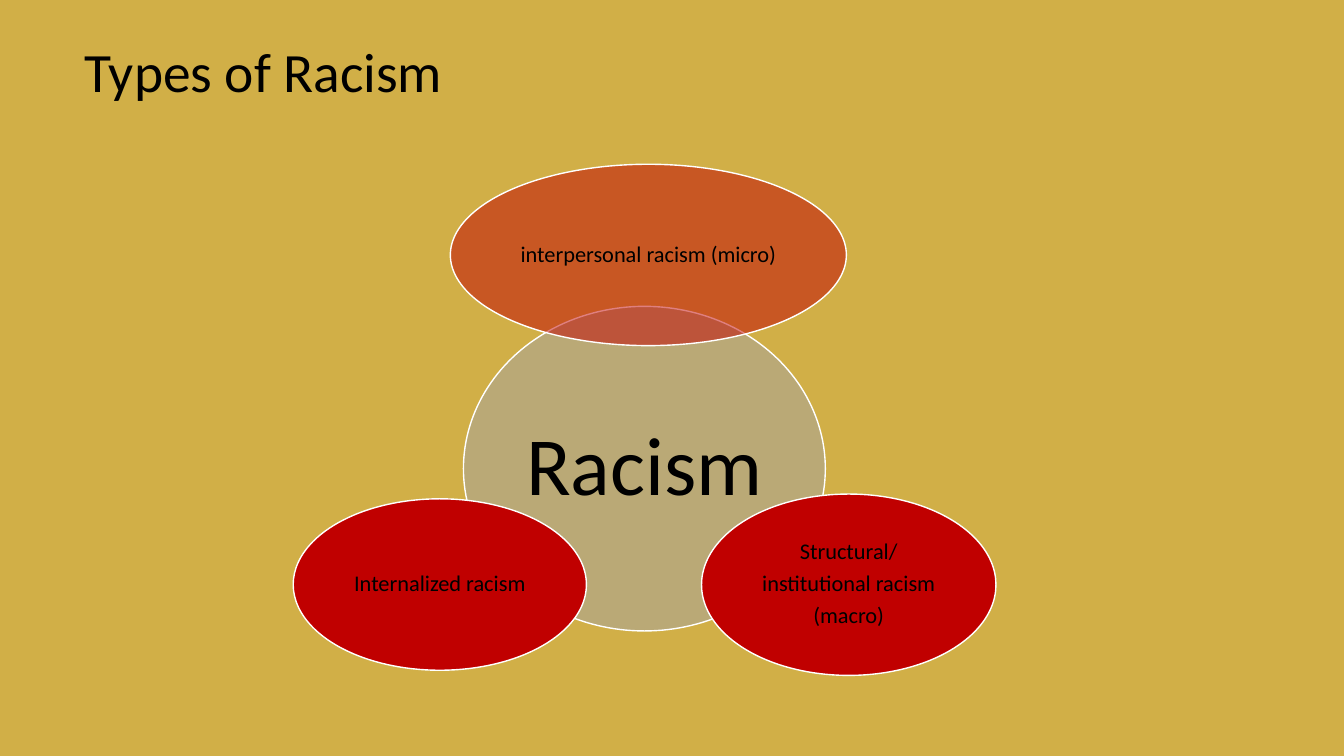
from dataclasses import dataclass

from lxml.etree import SubElement
from pptx import Presentation
from pptx.dml.color import RGBColor
from pptx.enum.shapes import MSO_SHAPE
from pptx.enum.text import MSO_ANCHOR, PP_ALIGN
from pptx.oxml.ns import qn
from pptx.shapes.autoshape import Shape
from pptx.slide import Slide
from pptx.util import Cm, Pt


@dataclass(frozen=True)
class Theme:
    font: str = "Calibri"
    background: RGBColor = RGBColor(0xD1, 0xAF, 0x47)
    text: RGBColor = RGBColor(0x00, 0x00, 0x00)
    outline: RGBColor = RGBColor(0xFF, 0xFF, 0xFF)
    core: RGBColor = RGBColor(0xA5, 0xA5, 0xA5)
    racism_type: RGBColor = RGBColor(0xC0, 0x00, 0x00)
    title_size: float = 39.6
    core_size: float = 59
    type_size: float = 16
    line_spacing: float = 0.9
    space_after_share: float = 0.35


THEME = Theme()


@dataclass(frozen=True)
class Oval:
    """An ellipse with its label; lengths are centimetres."""
    label: str
    left: float
    top: float
    width: float
    height: float
    fill: RGBColor = THEME.racism_type
    size: float = THEME.type_size
    inset: float = 0.05
    opacity: int = 100


OVALS = (
    Oval("Racism", 11.68, 7.72, 9.12, 8.18, THEME.core, THEME.core_size, 0.2, 50),
    Oval("interpersonal racism (micro)", 11.35, 4.14, 9.98, 4.57, opacity=50),
    Oval("Structural/\ninstitutional racism\n(macro)", 17.68, 12.45, 7.42, 4.57),
    Oval("Internalized racism", 7.39, 12.57, 7.39, 4.32),
)


def write_text(shape: Shape, text: str, size: float, alignment: PP_ALIGN,
               space_after: float = 0) -> None:
    frame = shape.text_frame
    frame.text = text
    frame.word_wrap = True
    frame.vertical_anchor = MSO_ANCHOR.MIDDLE
    for paragraph in frame.paragraphs:
        paragraph.alignment = alignment
        paragraph.line_spacing = THEME.line_spacing
        paragraph.space_after = Pt(space_after)
        for run in paragraph.runs:
            run.font.name = THEME.font
            run.font.size = Pt(size)
            run.font.color.rgb = THEME.text


def set_opacity(shape: Shape, percent: int) -> None:
    color = shape.fill._xPr.find(qn("a:solidFill"))[0]
    SubElement(color, qn("a:alpha"), val=str(percent * 1000))


def draw_title(slide: Slide, title: str) -> None:
    box = slide.shapes.add_textbox(Cm(1.88), Cm(0.94), Cm(26.31), Cm(1.9))
    write_text(box, title, THEME.title_size, PP_ALIGN.LEFT)


def draw_oval(slide: Slide, oval: Oval) -> None:
    shape = slide.shapes.add_shape(MSO_SHAPE.OVAL, Cm(oval.left), Cm(oval.top),
                                   Cm(oval.width), Cm(oval.height))
    shape.shadow.inherit = False
    shape.fill.solid()
    shape.fill.fore_color.rgb = oval.fill
    if oval.opacity < 100:
        set_opacity(shape, oval.opacity)
    shape.line.color.rgb = THEME.outline
    shape.line.width = Pt(1)
    frame = shape.text_frame
    frame.margin_left = frame.margin_right = Cm(oval.inset)
    frame.margin_top = frame.margin_bottom = Cm(oval.inset)
    write_text(shape, oval.label, oval.size, PP_ALIGN.CENTER,
               round(oval.size * THEME.space_after_share, 1))


def main() -> None:
    presentation = Presentation()
    presentation.slide_width = Cm(33.87)
    presentation.slide_height = Cm(19.05)
    slide = presentation.slides.add_slide(presentation.slide_layouts[6])
    slide.background.fill.solid()
    slide.background.fill.fore_color.rgb = THEME.background
    for oval in OVALS:
        draw_oval(slide, oval)
    draw_title(slide, "Types of Racism")
    presentation.save("out.pptx")


if __name__ == "__main__":
    main()
